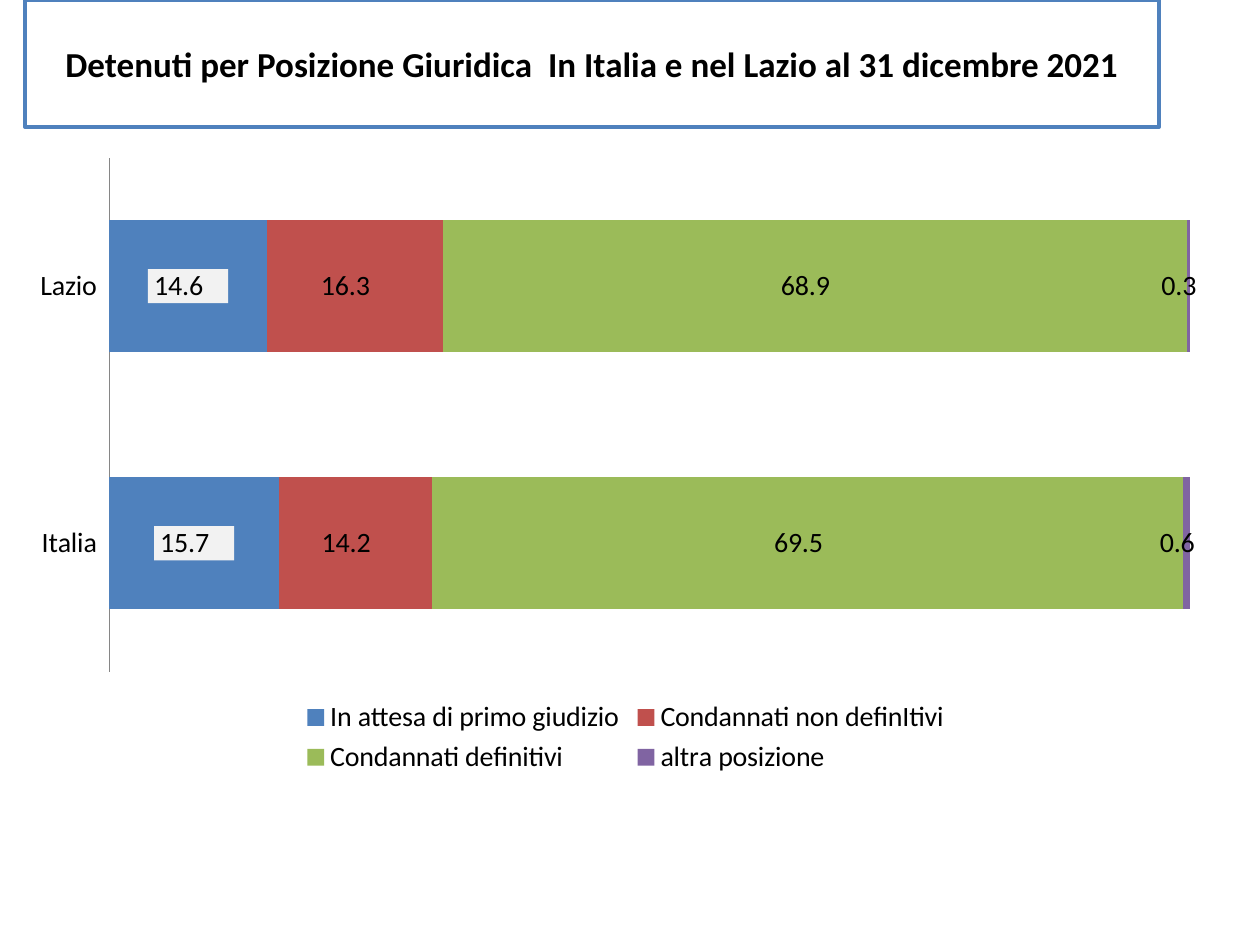
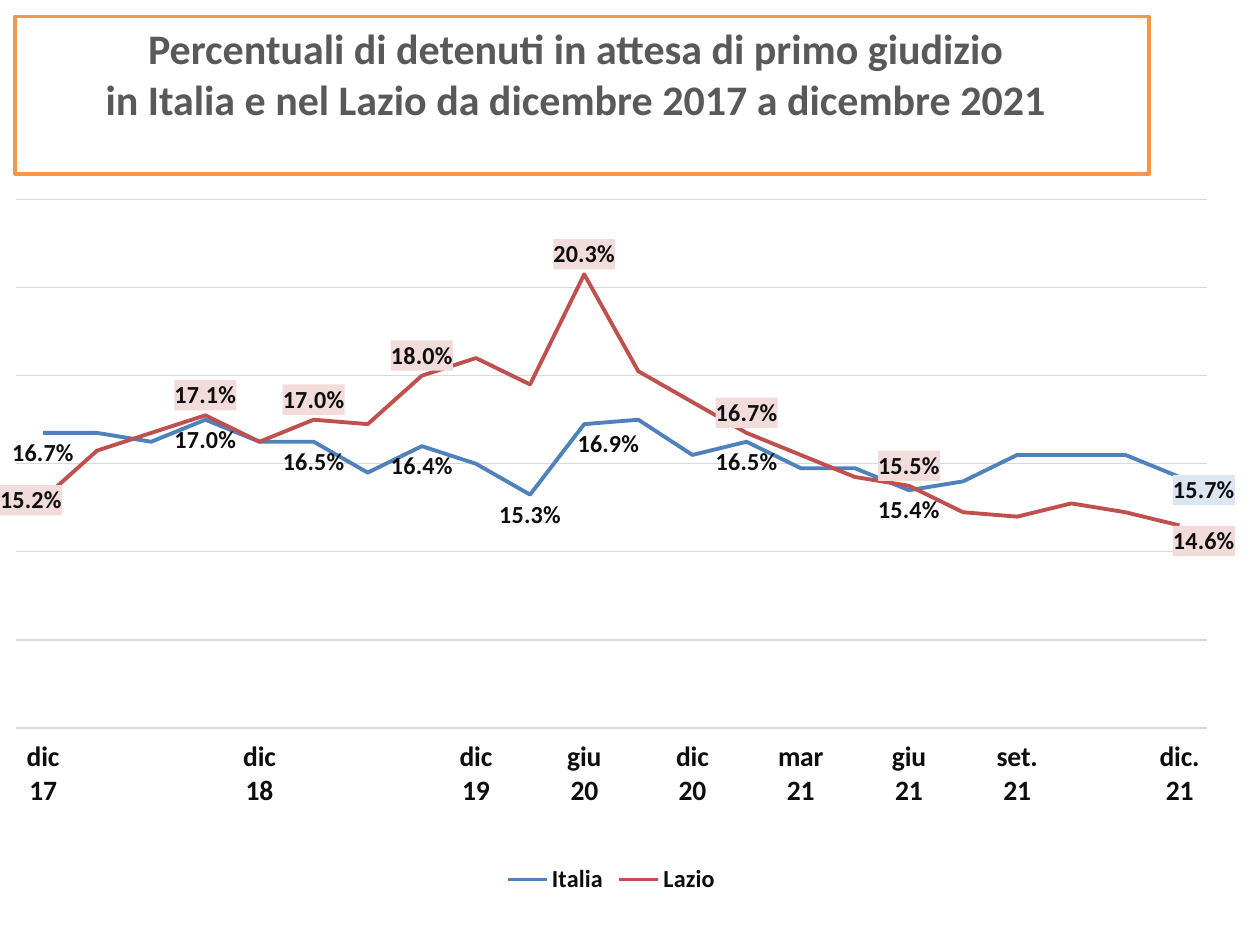
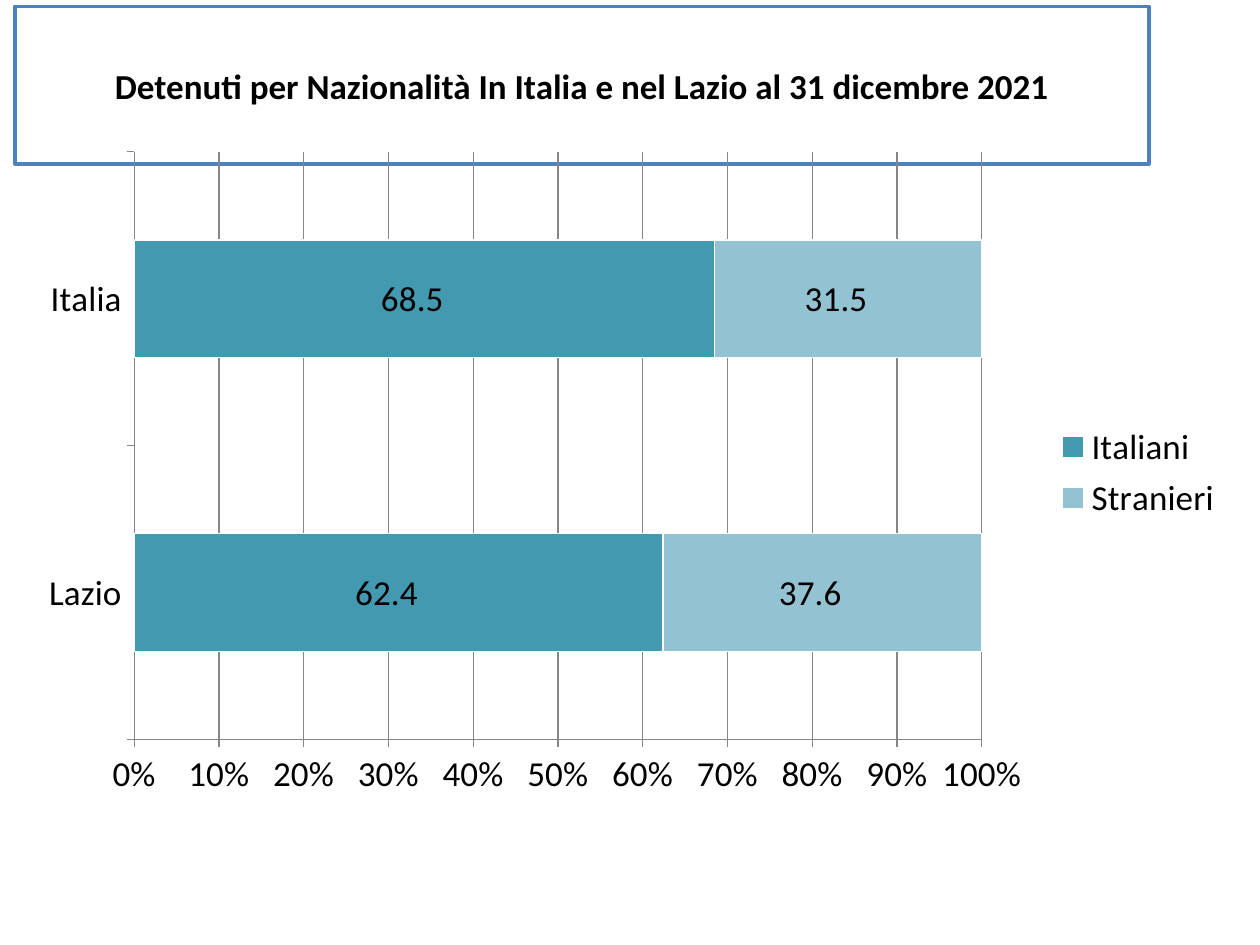
from copy import deepcopy
from dataclasses import dataclass, field
from typing import Any, NamedTuple

from pptx import Presentation
from pptx.chart.data import CategoryChartData
from pptx.dml.color import RGBColor
from pptx.enum.chart import XL_CHART_TYPE as Kind
from pptx.enum.chart import XL_LABEL_POSITION as LabelPos
from pptx.enum.chart import XL_LEGEND_POSITION as LegendPos
from pptx.enum.chart import XL_TICK_LABEL_POSITION as TickPos
from pptx.enum.chart import XL_TICK_MARK as Tick
from pptx.enum.text import MSO_ANCHOR as Anchor
from pptx.enum.text import MSO_AUTO_SIZE as AutoSize
from pptx.enum.text import PP_ALIGN as Align
from pptx.oxml import parse_xml
from pptx.oxml.ns import nsdecls, qn
from pptx.util import Inches, Pt

# Shared look: a grid of 100 columns by 75 rows
COLS, ROWS = 100, 75
CELL = Inches(0.1)
FONT = "Calibri"
COLORS = {
    "white": "FFFFFF", "black": "000000", "ink": "0D0D0D", "title gray": "595959",
    "axis": "868686", "grid": "D9D9D9", "blue": "4F81BD", "red": "C0504D",
    "green": "9BBB59", "purple": "8064A2", "orange": "F79646",
    "teal": "4299B0", "light teal": "93C2D3",
    "pale gray": "F2F2F2", "pale red": "F2DCDB", "pale blue": "DCE6F2",
}
ACCOUNTING = r"_-* #,##0.0\ _€_-;\-* #,##0.0\ _€_-;_-* "


class Box(NamedTuple):
    """Place on the slide in grid columns and rows."""
    col: float
    row: float
    cols: float
    rows: float

    def emu(self) -> list[int]:
        return [int(v * CELL) for v in self]


class Area(NamedTuple):
    """Plot area as shares of its chart."""
    x: float
    y: float
    w: float
    h: float


class Shift(NamedTuple):
    """Moved label: offset as shares of the chart, and its fill."""
    x: float
    y: float
    fill: str | None = None


@dataclass
class Title:
    text: str
    box: Box
    border: str = "blue"
    color: str = "black"
    size: int = 20
    frame: dict[str, Any] = field(default_factory=dict)


@dataclass
class Series:
    name: str
    values: list[float]
    color: str
    label_fill: str | None = None
    label_pos: LabelPos = LabelPos.CENTER
    hidden: set[int] = field(default_factory=set)
    moved: dict[int, Shift] = field(default_factory=dict)


@dataclass
class Graph:
    kind: Kind
    box: Box
    area: Area
    cats: list[str]
    series: list[Series]
    size: int
    legend: LegendPos
    number_format: str = ACCOUNTING
    color: str = "black"
    bold: bool = False
    gap: int | None = None
    outline: str | None = None
    cat_axis: dict[str, Any] = field(default_factory=dict)
    cat_size: int | None = None
    cat_line: str = "axis"
    val_axis: dict[str, Any] = field(default_factory=dict)
    grid: str | None = None


def apply(obj: Any, values: dict[str, Any]) -> None:
    for name, value in values.items():
        setattr(obj, name, value)


def rgb(name: str) -> RGBColor:
    return RGBColor.from_string(COLORS[name])


def set_font(font: Any, size: int, color: str, bold: bool = False) -> None:
    apply(font, {"name": FONT, "size": Pt(size), "bold": bold})
    font.color.rgb = rgb(color)


def set_line(line: Any, color: str, width: float) -> None:
    line.color.rgb = rgb(color)
    line.width = Pt(width)


# XML parts of the charts
def layout_xml(values: dict[str, float], inner: bool = False) -> Any:
    modes = ('<c:layoutTarget val="inner"/><c:xMode val="edge"/><c:yMode val="edge"/>'
             if inner else "")
    parts = "".join(f'<c:{k} val="{v}"/>' for k, v in values.items())
    return parse_xml(f'<c:layout {nsdecls("c")}><c:manualLayout>{modes}{parts}'
                     "</c:manualLayout></c:layout>")


def place_plot(chart: Any, area: Area) -> None:
    plot_area = chart._chartSpace.find(".//" + qn("c:plotArea"))
    for old in plot_area.findall(qn("c:layout")):
        plot_area.remove(old)
    plot_area.insert(0, layout_xml(area._asdict(), inner=True))


def fill_label(labels: Any, color: str | None) -> None:
    if color is None:
        return
    for old in labels.findall(qn("c:spPr")):
        labels.remove(old)
    labels.find(qn("c:txPr")).addprevious(parse_xml(
        f'<c:spPr {nsdecls("c", "a")}><a:solidFill><a:srgbClr val="{COLORS[color]}"/>'
        "</a:solidFill></c:spPr>"))


def set_point_labels(labels: Any, spec: Series) -> None:
    shared = [el for el in labels if el.tag != qn("c:showLeaderLines")]
    points = []
    for i in sorted(spec.hidden | set(spec.moved)):
        point = parse_xml(f'<c:dLbl {nsdecls("c")}><c:idx val="{i}"/></c:dLbl>')
        if i in spec.hidden:
            point.append(parse_xml(f'<c:delete {nsdecls("c")} val="1"/>'))
        else:
            shift = spec.moved[i]
            point.append(layout_xml({"x": shift.x, "y": shift.y}))
            point.extend([deepcopy(el) for el in shared])
            fill_label(point, shift.fill)
        points.append(point)
    for n, point in enumerate(points):
        labels.insert(n, point)


# Drawing
def draw_title(slide: Any, title: Title) -> None:
    sp = slide.shapes.title
    apply(sp, dict(zip(("left", "top", "width", "height"), title.box.emu())))
    sp.fill.solid()
    sp.fill.fore_color.rgb = rgb("white")
    set_line(sp.line, title.border, 2)
    tf = sp.text_frame
    tf.text = title.text
    apply(tf, {"word_wrap": True, "auto_size": AutoSize.NONE,
               "vertical_anchor": Anchor.MIDDLE, **title.frame})
    p = tf.paragraphs[0]
    p.alignment = Align.CENTER
    for r in p.runs:
        set_font(r.font, title.size, title.color, bold=True)


def draw_series(series: Any, spec: Series, graph: Graph) -> None:
    if graph.kind == Kind.LINE:
        series.smooth = False
        set_line(series.format.line, spec.color, 2.25)
    else:
        series.format.fill.solid()
        series.format.fill.fore_color.rgb = rgb(spec.color)
        if graph.outline:
            set_line(series.format.line, graph.outline, 0.75)
    labels = series.data_labels
    apply(labels, {"show_value": True, "number_format": graph.number_format,
                   "number_format_is_linked": False, "position": spec.label_pos})
    set_font(labels.font, graph.size, graph.color, graph.bold)
    fill_label(labels._element, spec.label_fill)
    set_point_labels(labels._element, spec)


def draw_graph(slide: Any, graph: Graph) -> None:
    data = CategoryChartData()
    data.categories = graph.cats
    for s in graph.series:
        data.add_series(s.name, s.values)
    chart = slide.shapes.add_chart(graph.kind, *graph.box.emu(), data).chart
    chart.has_title = False
    set_font(chart.font, graph.size, graph.color)
    place_plot(chart, graph.area)

    chart.has_legend = True
    apply(chart.legend, {"position": graph.legend, "include_in_layout": False})
    set_font(chart.legend.font, graph.size, graph.color, graph.bold)

    plot = chart.plots[0]
    plot.vary_by_categories = False
    if graph.gap is not None:
        apply(plot, {"gap_width": graph.gap, "overlap": 100})
    for series, spec in zip(plot.series, graph.series):
        draw_series(series, spec, graph)

    cat, val = chart.category_axis, chart.value_axis
    apply(cat, {"has_major_gridlines": False, "major_tick_mark": Tick.NONE,
                "minor_tick_mark": Tick.NONE, "tick_label_position": TickPos.LOW,
                **graph.cat_axis})
    set_font(cat.tick_labels.font, graph.cat_size or graph.size, graph.color, graph.bold)
    set_line(cat.format.line, graph.cat_line, 0.75)
    apply(val, {"has_major_gridlines": graph.grid is not None,
                "minor_tick_mark": Tick.NONE, **graph.val_axis})
    if graph.grid:
        set_line(val.major_gridlines.format.line, graph.grid, 0.75)
    if val.visible:
        apply(val.tick_labels, {"number_format": "0%", "number_format_is_linked": False})
        set_line(val.format.line, "axis", 0.75)


# Content
LABELLED = {0, 5, 8, 11, 12, 14, 16, 18, 21}
QUARTERS = {0: "dic. 21", 3: "set. 21", 5: "giu 21", 7: "mar 21", 9: "dic 20",
            11: "giu 20", 13: "dic 19", 17: "dic 18", 21: "dic 17"}
N_QUARTERS = 22
UNLABELLED = set(range(N_QUARTERS)) - LABELLED

SLIDES = [
    (Title("Detenuti per Posizione Giuridica  In Italia e nel Lazio al 31 dicembre 2021",
           Box(2, 0, 90, 10.1)),
     Graph(Kind.BAR_STACKED_100, Box(2, 11.5, 95.3, 50.4), Area(0.07, 0.02, 0.9, 0.81),
           ["Lazio", "Italia"],
           [Series("In attesa di primo giudizio", [14.6, 15.7], "blue", "pale gray"),
            Series("Condannati non definItivi", [16.3, 14.2], "red"),
            Series("Condannati definitivi", [68.9, 69.5], "green"),
            Series("altra posizione", [0.3, 0.6], "purple")],
           size=16, legend=LegendPos.BOTTOM, gap=95,
           cat_axis={"reverse_order": True}, val_axis={"visible": False})),
    (Title("Percentuali di detenuti in attesa di primo giudizio\v"
           "in Italia e nel Lazio da dicembre 2017 a dicembre 2021",
           Box(1.2, 1.3, 90, 12.5), "orange", "title gray", 24,
           {"vertical_anchor": Anchor.TOP, "margin_right": Inches(0.2)}),
     Graph(Kind.LINE, Box(0, 14.7, 98, 56.7), Area(0.01, 0.02, 0.98, 0.74),
           [QUARTERS.get(i, "") for i in range(N_QUARTERS)],
           [Series("Italia",
                   [0.157, 0.162, 0.162, 0.162, 0.156, 0.154, 0.159, 0.159, 0.165, 0.162,
                    0.17, 0.169, 0.153, 0.16, 0.164, 0.158, 0.165, 0.165, 0.17, 0.165,
                    0.167, 0.167],
                   "blue", label_pos=LabelPos.BELOW, hidden=UNLABELLED,
                   moved={0: Shift(0.02, -0.01, "pale blue"), 11: Shift(0.02, 0)}),
            Series("Lazio",
                   [0.146, 0.149, 0.151, 0.148, 0.149, 0.155, 0.157, 0.162, 0.167, 0.174,
                    0.181, 0.203, 0.178, 0.184, 0.18, 0.169, 0.17, 0.165, 0.171, 0.167,
                    0.163, 0.152],
                   "red", "pale red", LabelPos.ABOVE, UNLABELLED | {12},
                   {0: Shift(0.02, 0.05), 21: Shift(-0.01, 0.03)})],
           size=14, legend=LegendPos.BOTTOM, number_format="0.0%", color="ink", bold=True,
           cat_axis={"reverse_order": True}, cat_size=16, cat_line="grid", grid="grid",
           val_axis={"visible": False, "minimum_scale": 0.1, "maximum_scale": 0.22,
                     "major_unit": 0.02})),
    (Title("Detenuti per Nazionalità In Italia e nel Lazio al 31 dicembre 2021",
           Box(1.2, 0.5, 90, 12.5)),
     Graph(Kind.BAR_STACKED_100, Box(2, 11, 96.1, 53), Area(0.09, 0.02, 0.7, 0.88),
           ["Lazio", "Italia"],
           [Series("Italiani", [62.4, 68.5], "teal"),
            Series("Stranieri", [37.6, 31.5], "light teal")],
           size=20, legend=LegendPos.RIGHT, gap=150, outline="white", grid="axis",
           cat_axis={"major_tick_mark": Tick.OUTSIDE},
           val_axis={"major_tick_mark": Tick.OUTSIDE, "major_unit": 0.1})),
]


def main() -> None:
    prs = Presentation()
    apply(prs, {"slide_width": COLS * CELL, "slide_height": ROWS * CELL})
    title_only = prs.slide_layouts.get_by_name("Title Only")
    for title, graph in SLIDES:
        s = prs.slides.add_slide(title_only)
        draw_title(s, title)
        draw_graph(s, graph)
    prs.save("out.pptx")


if __name__ == "__main__":
    main()
